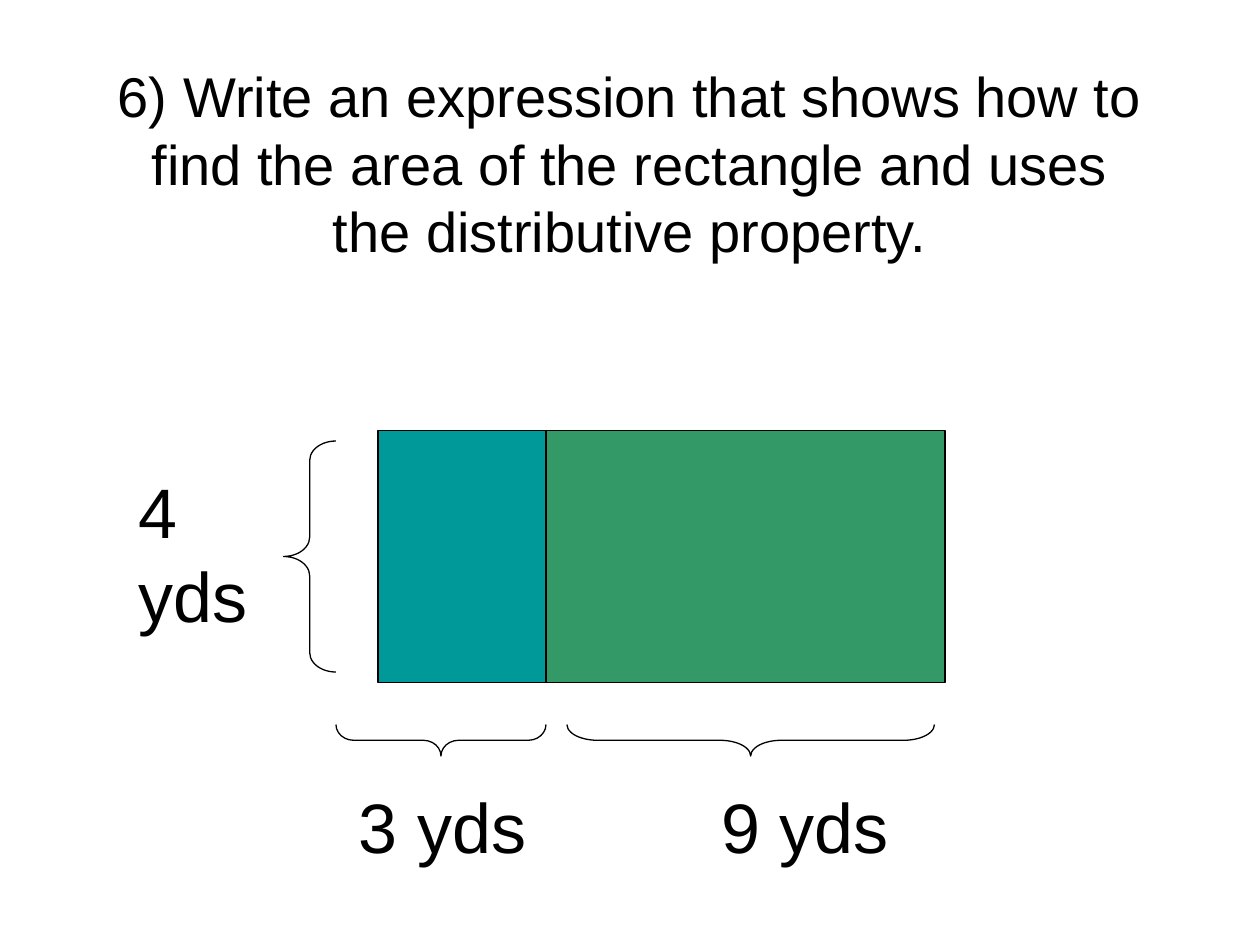
from dataclasses import dataclass

from pptx import Presentation
from pptx.dml.color import RGBColor
from pptx.enum.shapes import MSO_SHAPE
from pptx.enum.text import MSO_ANCHOR, PP_ALIGN
from pptx.util import Inches, Pt

RECTANGLE, LEFT_BRACE = MSO_SHAPE.RECTANGLE, MSO_SHAPE.LEFT_BRACE
TOP, MIDDLE = MSO_ANCHOR.TOP, MSO_ANCHOR.MIDDLE
LEFT, CENTER = PP_ALIGN.LEFT, PP_ALIGN.CENTER
CELL = Inches(1) // 12


@dataclass(frozen=True)
class Theme:
    """Colours, font and sizes of the slide."""
    ink: RGBColor = RGBColor(0, 0, 0)
    teal: RGBColor = RGBColor(0x00, 0x99, 0x99)
    green: RGBColor = RGBColor(0x33, 0x99, 0x66)
    font: str = "Arial"
    question: Pt = Pt(32)
    measure: Pt = Pt(40)
    outline: Pt = Pt(0.75)


THEME = Theme()


@dataclass(frozen=True)
class Box:
    """A region in grid cells, twelve to the inch."""
    left: float
    top: float
    width: float
    height: float

    def inner(self, left, top, width, height):
        """Return a region placed relative to this one."""
        return Box(self.left + left, self.top + top, width, height)

    def turned(self):
        """Return the region with its sides swapped about its centre."""
        shift = (self.width - self.height) / 2
        return Box(self.left + shift, self.top - shift, self.height, self.width)

    def lengths(self):
        """Return left, top, width and height as slide lengths."""
        return [round(n * CELL) for n in (self.left, self.top, self.width, self.height)]


def add_text(slide, box, wording, size, align=LEFT, anchor=TOP, indent=0):
    """Write one wrapped paragraph in the box."""
    frame = slide.shapes.add_textbox(*box.lengths()).text_frame
    frame.word_wrap = True
    frame.vertical_anchor = anchor
    frame.margin_left = Inches(0.1 + indent)
    paragraph = frame.paragraphs[0]
    paragraph.text = wording
    paragraph.alignment = align
    paragraph.font.name = THEME.font
    paragraph.font.size = size
    paragraph.font.color.rgb = THEME.ink


def add_outlined(slide, kind, box, fill=None):
    """Draw a thinly outlined shape, filled if a colour is given."""
    shape = slide.shapes.add_shape(kind, *box.lengths())
    shape.shadow.inherit = False
    shape.line.color.rgb = THEME.ink
    shape.line.width = THEME.outline
    if fill is None:
        shape.fill.background()
    else:
        shape.fill.solid()
        shape.fill.fore_color.rgb = fill
    return shape


def add_brace(slide, box, curve, below=False):
    """Draw a brace that points left, or down when it lies below."""
    brace = add_outlined(slide, LEFT_BRACE, box.turned() if below else box)
    brace.adjustments[0] = curve
    if below:
        brace.rotation = 270


def add_question(slide, box):
    """Write the exercise at the top of the slide."""
    add_text(slide, box,
             "6) Write an expression that shows how to find the area of the "
             "rectangle and uses the distributive property.",
             THEME.question, CENTER, MIDDLE)


def add_area_model(slide, box):
    """Draw the split rectangle with its braces and measures."""
    short, tall = 16, 24
    add_outlined(slide, RECTANGLE, box.inner(24, 0, short, tall), THEME.teal)
    add_outlined(slide, RECTANGLE, box.inner(24 + short, 0, 38, tall), THEME.green)

    add_text(slide, box.inner(0, 3, 15, 17.2), "4 yds", THEME.measure)
    add_brace(slide, box.inner(15, 1, 5, tall - 2), 0.37)

    label_top, label_height = 33, 9.25
    add_text(slide, box.inner(21, label_top, 20, label_height), "3 yds", THEME.measure)
    add_text(slide, box.inner(50, label_top, 37, label_height), "9 yds",
             THEME.measure, indent=0.46)

    brace_top, brace_height = tall + 4, 3
    add_brace(slide, box.inner(42, brace_top, 35, brace_height), 0.97, below=True)
    add_brace(slide, box.inner(20, brace_top, 20, brace_height), 0.56, below=True)


def main():
    """Build and save the slide."""
    deck = Presentation()
    deck.slide_width, deck.slide_height = Inches(10), Inches(7.5)
    slide = deck.slides.add_slide(deck.slide_layouts[6])
    add_question(slide, Box(9, 8, 102, 15))
    add_area_model(slide, Box(12, 41, 87, 42.25))
    deck.save("out.pptx")


if __name__ == "__main__":
    main()
